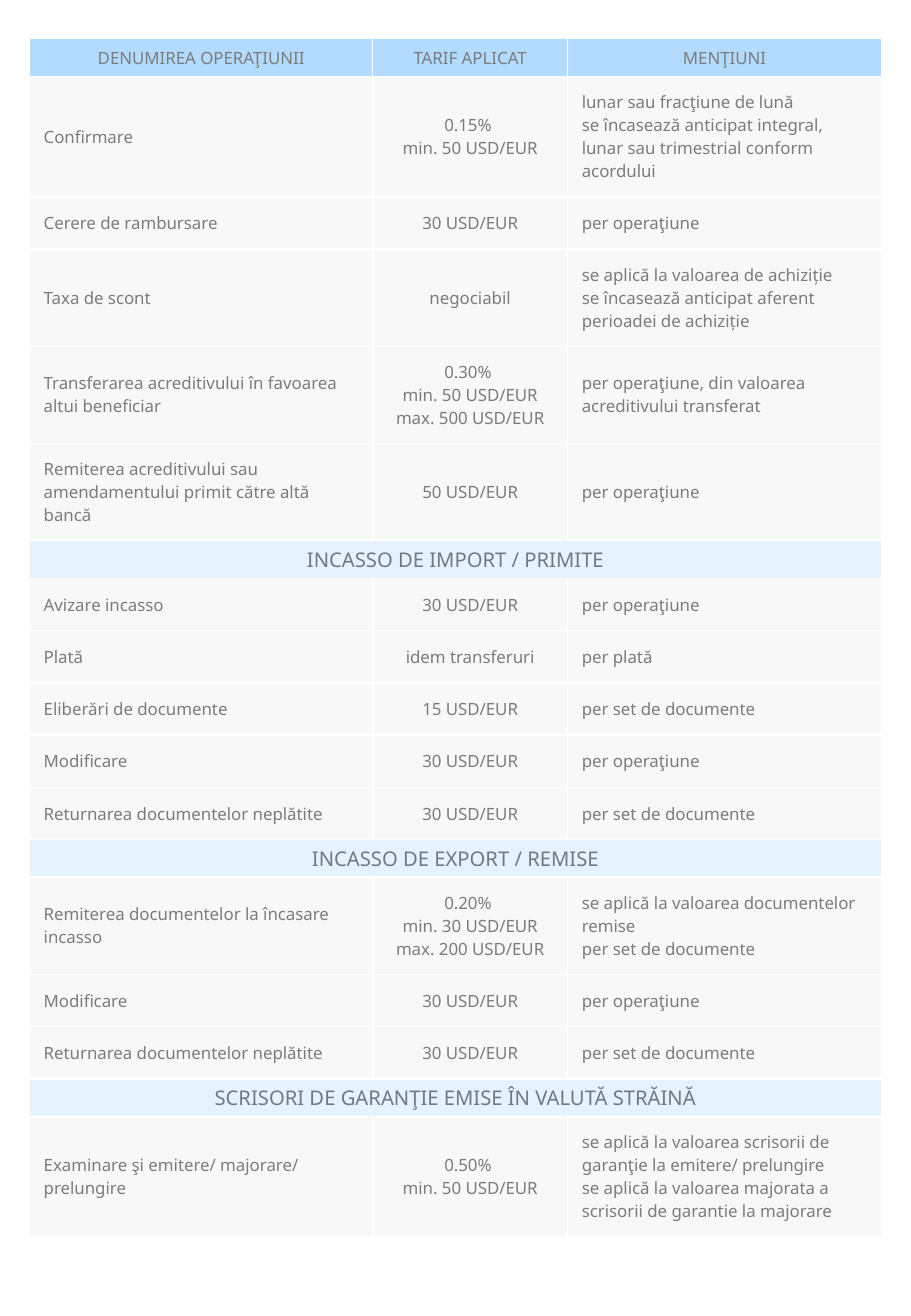
from dataclasses import dataclass

import lxml.etree
import pptx
import pptx.dml.color
import pptx.enum.text
import pptx.oxml.ns
import pptx.table
import pptx.util

Inches = pptx.util.Inches
Pt = pptx.util.Pt
Align = pptx.enum.text.PP_ALIGN
qn = pptx.oxml.ns.qn


@dataclass(frozen=True)
class Tint:
    color: str
    opacity: int = 100


@dataclass(frozen=True)
class Theme:
    font: str = "Noto Sans"
    body_size: float = 10
    section_size: float = 12
    text: Tint = Tint("7C7C7C")
    section_text: Tint = Tint("000000", 50)
    header_fill: Tint = Tint("0088FF", 30)
    section_fill: Tint = Tint("0088FF", 10)
    body_fill: Tint = Tint("F2F2F2", 50)
    border: str = "FFFFFF"


@dataclass(frozen=True)
class CellStyle:
    fill: Tint
    text: Tint
    size: float
    inset_side: float
    inset_top: float
    border_width: float


@dataclass(frozen=True)
class Section:
    title: str


@dataclass(frozen=True)
class Operation:
    name: str
    fee: str
    note: str
    lines: int = 1


THEME = Theme()
HEADER = CellStyle(THEME.header_fill, THEME.text, THEME.body_size, 0.05, 0.05, 0.75)
SECTION = CellStyle(THEME.section_fill, THEME.section_text, THEME.section_size, 0.04, 0.04, 1)
BODY = CellStyle(THEME.body_fill, THEME.text, THEME.body_size, 0.12, 0.11, 1)

COLUMN_WIDTHS = (2.83, 1.6, 2.59)
COLUMN_ALIGNMENTS = (Align.LEFT, Align.CENTER, Align.LEFT)
TITLE_HEIGHT = 0.31
HEIGHT_BY_LINES = {1: 0.43, 3: 0.8, 4: 0.99}

COLUMN_TITLES = ("DENUMIREA OPERAŢIUNII", "TARIF APLICAT", "MENŢIUNI")
PER_OPERATION = "per operaţiune"
PER_SET = "per set de documente"
FEE_30 = "30 USD/EUR"
CHANGE = Operation("Modificare", FEE_30, PER_OPERATION)
RETURN = Operation("Returnarea documentelor neplătite", FEE_30, PER_SET)

TARIFFS: tuple[Section | Operation, ...] = (
    Operation("Confirmare", "0.15% \nmin. 50 USD/EUR",
              "lunar sau fracţiune de lună\n"
              "se încasează anticipat integral, lunar sau trimestrial conform acordului", 4),
    Operation("Cerere de rambursare", FEE_30, PER_OPERATION),
    Operation("Taxa de scont", "negociabil",
              "se aplică la valoarea de achiziție\n"
              "se încasează anticipat aferent perioadei de achiziție", 3),
    Operation("Transferarea acreditivului în favoarea altui beneficiar",
              "0.30% \nmin. 50 USD/EUR\vmax. 500 USD/EUR",
              "per operaţiune, din valoarea acreditivului transferat", 3),
    Operation("Remiterea acreditivului sau amendamentului primit către altă bancă",
              "50 USD/EUR", PER_OPERATION, 3),
    Section("INCASSO DE IMPORT / PRIMITE"),
    Operation("Avizare incasso", FEE_30, PER_OPERATION),
    Operation("Plată", "idem transferuri", "per plată"),
    Operation("Eliberări de documente", "15 USD/EUR", PER_SET),
    CHANGE,
    RETURN,
    Section("INCASSO DE EXPORT / REMISE"),
    Operation("Remiterea documentelor la încasare incasso",
              "0.20% \nmin. 30 USD/EUR\nmax. 200 USD/EUR",
              "se aplică la valoarea documentelor remise\nper set de documente", 3),
    CHANGE,
    RETURN,
    Section("SCRISORI DE GARANŢIE EMISE ÎN VALUTĂ STRĂINĂ"),
    Operation("Examinare şi emitere/ majorare/ prelungire", "0.50% \nmin. 50 USD/EUR",
              "se aplică la valoarea scrisorii de garanţie la emitere/ prelungire\n"
              "se aplică la valoarea majorata a scrisorii de garantie la majorare", 4),
)


def apply_tint(fill: pptx.dml.fill.FillFormat, tint: Tint,
               owner: lxml.etree._Element) -> None:
    """Fill with a colour; owner is the element that holds the fill."""
    fill.solid()
    fill.fore_color.rgb = pptx.dml.color.RGBColor.from_string(tint.color)
    if tint.opacity < 100:
        color = owner.find(qn("a:solidFill")).find(qn("a:srgbClr"))
        lxml.etree.SubElement(color, qn("a:alpha")).set("val", str(tint.opacity * 1000))


def add_borders(properties: lxml.etree._Element, width: float) -> None:
    for index, side in enumerate(("lnL", "lnR", "lnT", "lnB")):
        line = lxml.etree.Element(qn(f"a:{side}"), w=str(Pt(width)))
        solid = lxml.etree.SubElement(line, qn("a:solidFill"))
        lxml.etree.SubElement(solid, qn("a:srgbClr")).set("val", THEME.border)
        properties.insert(index, line)


def format_cell(cell: pptx.table._Cell, text: str, style: CellStyle,
                alignment: Align) -> None:
    cell.margin_left = cell.margin_right = Inches(style.inset_side)
    cell.margin_top = cell.margin_bottom = Inches(style.inset_top)
    cell.vertical_anchor = pptx.enum.text.MSO_ANCHOR.MIDDLE
    properties = cell._tc.get_or_add_tcPr()
    apply_tint(cell.fill, style.fill, properties)
    add_borders(properties, style.border_width)
    cell.text_frame.text = text
    for paragraph in cell.text_frame.paragraphs:
        paragraph.alignment = alignment
        paragraph.font.size = Pt(style.size)
        for run in paragraph.runs:
            run.font.name = THEME.font
            run.font.size = Pt(style.size)
            apply_tint(run.font.fill, style.text, run._r.get_or_add_rPr())


def fill_row(table: pptx.table.Table, row: int, height: float, texts: tuple[str, ...],
             style: CellStyle, alignments: tuple[Align, ...]) -> None:
    table.rows[row].height = Inches(height)
    for column, (text, alignment) in enumerate(zip(texts, alignments)):
        format_cell(table.cell(row, column), text, style, alignment)


def main() -> None:
    presentation = pptx.Presentation()
    presentation.slide_width = Inches(7.5)
    presentation.slide_height = Inches(10.83)
    slide = presentation.slides.add_slide(presentation.slide_layouts[6])

    # Tariff table
    frame = slide.shapes.add_table(len(TARIFFS) + 1, len(COLUMN_WIDTHS), Inches(0.24),
                                   Inches(0.32), Inches(sum(COLUMN_WIDTHS)), Inches(9.23))
    table = frame.table
    table.first_row = table.horz_banding = False
    for column, width in zip(table.columns, COLUMN_WIDTHS):
        column.width = Inches(width)

    # Column titles
    centered = (Align.CENTER,) * len(COLUMN_WIDTHS)
    fill_row(table, 0, TITLE_HEIGHT, COLUMN_TITLES, HEADER, centered)

    # Section bands and operations
    for row, entry in enumerate(TARIFFS, start=1):
        if isinstance(entry, Section):
            fill_row(table, row, TITLE_HEIGHT, (entry.title, "", ""), SECTION, centered)
            table.cell(row, 0).merge(table.cell(row, len(COLUMN_WIDTHS) - 1))
        else:
            fill_row(table, row, HEIGHT_BY_LINES[entry.lines],
                     (entry.name, entry.fee, entry.note), BODY, COLUMN_ALIGNMENTS)
    frame.height = sum(row.height for row in table.rows)

    presentation.save("out.pptx")


if __name__ == "__main__":
    main()
